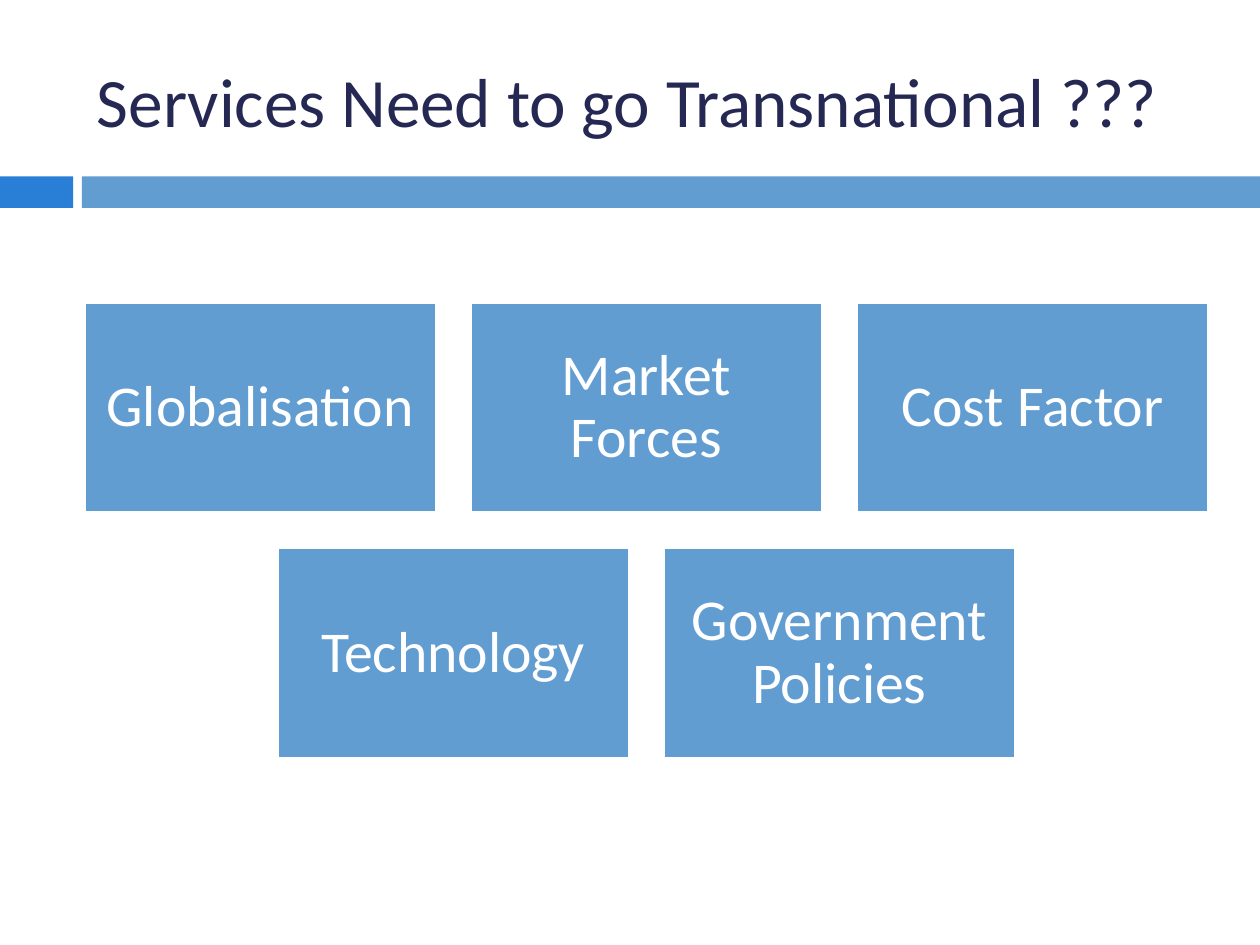
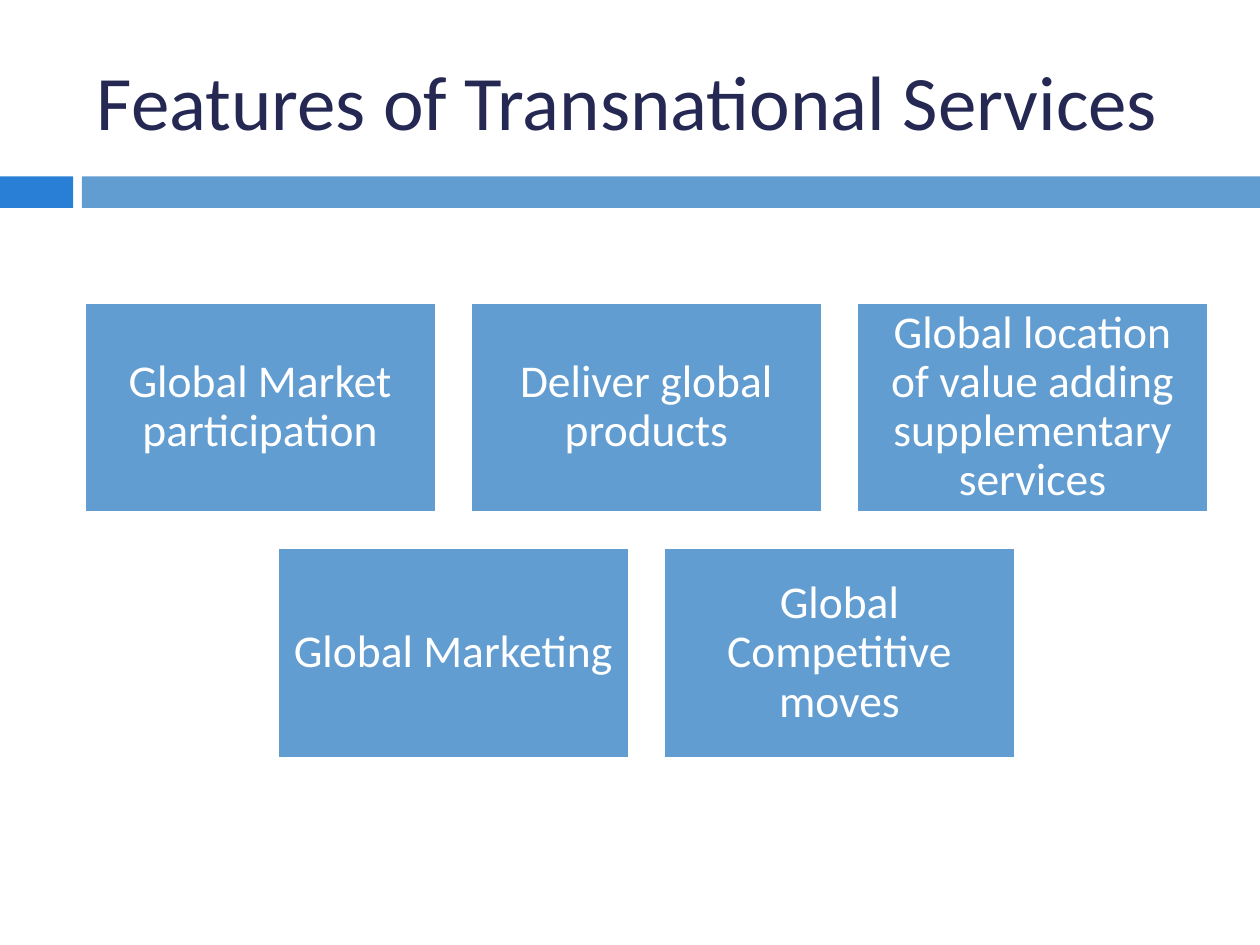
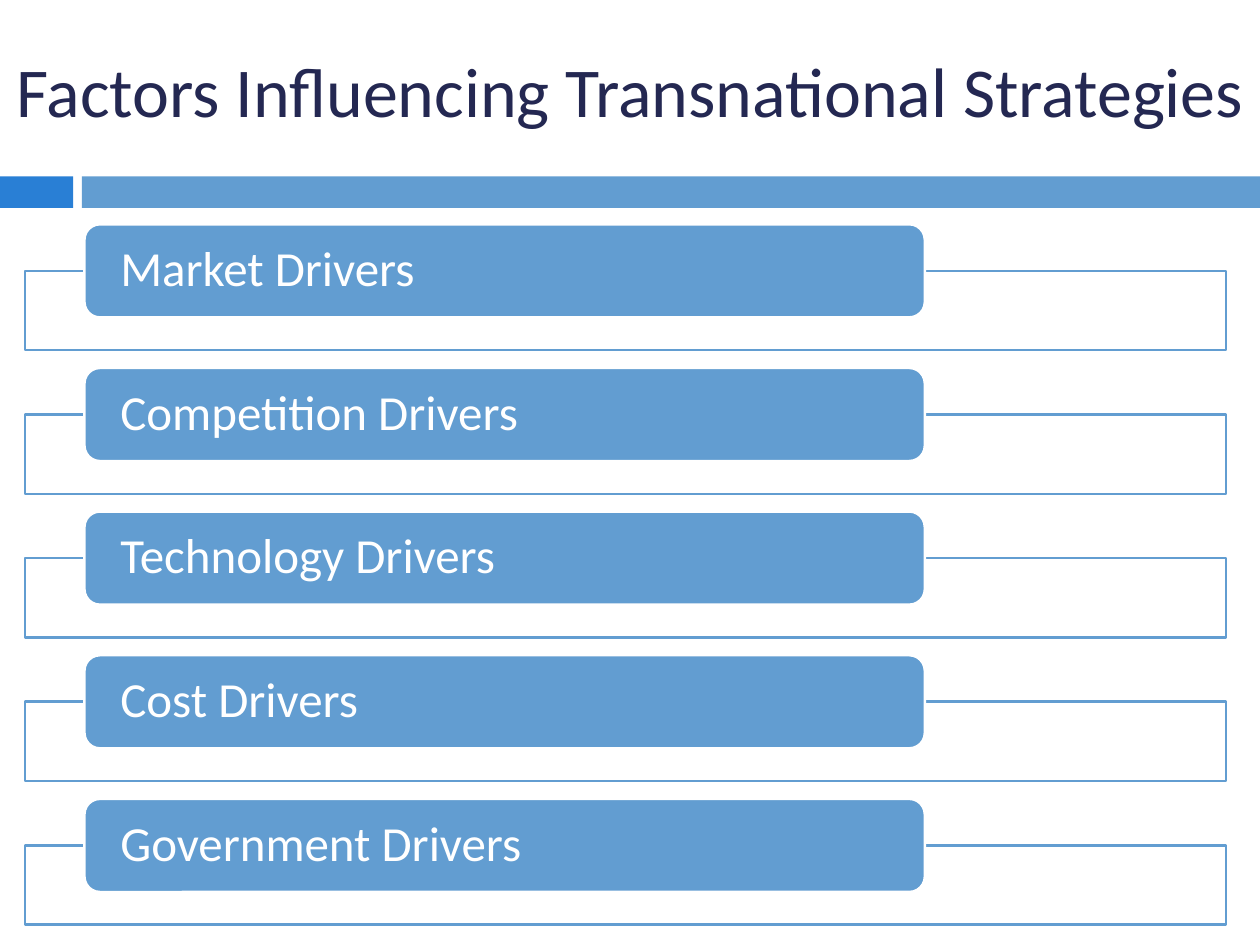
from pptx import Presentation
from pptx.dml.color import RGBColor
from pptx.enum.shapes import MSO_SHAPE as Shape
from pptx.enum.text import MSO_ANCHOR as Anchor, PP_ALIGN as Align
from pptx.util import Inches, Pt

FONT = "Calibri"
NAVY, BLUE, SKY, WHITE = "242852", "297FD5", "629DD1", "FFFFFF"

TITLE_BOX = (0.67, 0.25, 8.92, 1.08)
WIDE_TITLE_BOX = (0.12, 0.36, 9.88, 0.69)
GRID_BOX = (0.67, 2.4, 8.92, 3.62)
DRIVERS_BOX = (0.2, 1.78, 9.53, 5.56)


def color(hex_string):
    return RGBColor.from_string(hex_string)


def add_box(slide, kind, box, fill, line=None):
    shape = slide.shapes.add_shape(kind, *map(Inches, box))
    shape.shadow.inherit = False
    shape.fill.solid()
    shape.fill.fore_color.rgb = color(fill)
    if line:
        shape.line.color.rgb = color(line)
        shape.line.width = Pt(1.5)
    else:
        shape.line.fill.background()
    return shape


def write_text(shape, text, size, font_color, insets, align=Align.LEFT, spacing=1.0):
    """Fill the shape with one paragraph; insets are left, top, right, bottom."""
    frame = shape.text_frame
    frame.word_wrap = True
    frame.vertical_anchor = Anchor.MIDDLE
    (frame.margin_left, frame.margin_top,
     frame.margin_right, frame.margin_bottom) = map(Inches, insets)
    paragraph = frame.paragraphs[0]
    paragraph.alignment = align
    paragraph.line_spacing = spacing
    run = paragraph.add_run()
    run.text = text
    run.font.name = FONT
    run.font.size = Pt(size)
    run.font.color.rgb = color(font_color)


def add_titled_slide(presentation, title, size, box=TITLE_BOX, insets=(0.1, 0.05, 0.1, 0.05)):
    """Add a blank slide with the two-part band and a title above it."""
    slide = presentation.slides.add_slide(presentation.slide_layouts[6])
    add_box(slide, Shape.RECTANGLE, (0, 1.4, 0.58, 0.25), BLUE)
    add_box(slide, Shape.RECTANGLE, (0.65, 1.4, 9.35, 0.25), SKY)
    title_box = slide.shapes.add_textbox(*map(Inches, box))
    write_text(title_box, title, size, NAVY, insets)
    return slide


def add_tile_grid(slide, box, rows, size, inset):
    """Place rows of equal tiles, each row centred in the box."""
    left, top, width, height = box
    tile_width, tile_height = 2.79, 1.67
    gap = (width - 3 * tile_width) / 2
    row_step = height - tile_height
    for row, labels in enumerate(rows):
        row_width = len(labels) * (tile_width + gap) - gap
        row_left = left + (width - row_width) / 2
        for column, label in enumerate(labels):
            tile_box = (row_left + column * (tile_width + gap),
                        top + row * row_step, tile_width, tile_height)
            tile = add_box(slide, Shape.RECTANGLE, tile_box, SKY, WHITE)
            write_text(tile, label, size, WHITE, [inset] * 4, Align.CENTER, 0.9)


def add_driver_list(slide, box, drivers):
    """Stack outlined frames, each with a rounded label over its top edge."""
    left, top, width, height = box
    label_height, frame_drop, frame_height = 0.74, 0.37, 0.63
    step = (height - frame_drop - frame_height) / (len(drivers) - 1)
    for index, driver in enumerate(drivers):
        label_top = top + index * step
        add_box(slide, Shape.RECTANGLE,
                (left, label_top + frame_drop, width, frame_height), WHITE, SKY)
        label = add_box(slide, Shape.ROUNDED_RECTANGLE,
                        (left + 0.47, label_top, 0.7 * width, label_height), SKY, WHITE)
        write_text(label, driver, 28, WHITE, (0.25, 0, 0.25, 0), spacing=0.9)


def main():
    presentation = Presentation()
    presentation.slide_width, presentation.slide_height = Inches(10), Inches(7.5)

    slide = add_titled_slide(presentation, "Services Need to go Transnational ???", 39.6)
    add_tile_grid(slide, GRID_BOX, [
        ["Globalisation", "Market Forces", "Cost Factor"],
        ["Technology", "Government Policies"],
    ], size=33, inset=0.14)

    slide = add_titled_slide(presentation, "Features of Transnational Services", 44)
    add_tile_grid(slide, GRID_BOX, [
        ["Global Market participation", "Deliver global products",
         "Global location of value adding supplementary services"],
        ["Global Marketing", "Global Competitive moves"],
    ], size=26, inset=0.11)

    slide = add_titled_slide(presentation, "Factors Influencing Transnational Strategies", 40,
                             WIDE_TITLE_BOX, (0.01, 0.01, 0, 0))
    add_driver_list(slide, DRIVERS_BOX, [
        "Market Drivers", "Competition Drivers", "Technology Drivers",
        "Cost Drivers", "Government Drivers",
    ])

    presentation.save("out.pptx")


if __name__ == "__main__":
    main()
